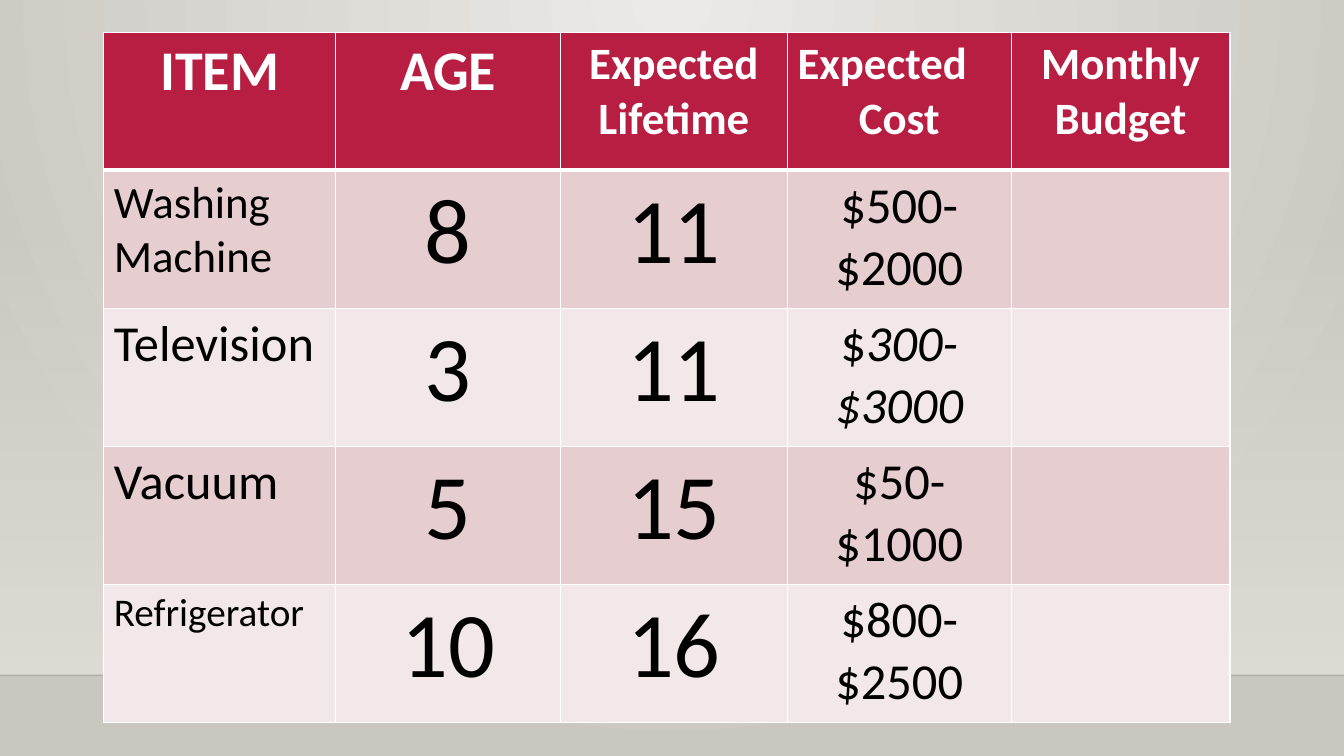
from lxml import etree
from pptx import Presentation
from pptx import util as u
from pptx.dml.color import RGBColor
from pptx.enum import shapes, text
from pptx.oxml import ns

WHITE = RGBColor(0xFF, 0xFF, 0xFF)
BLACK = RGBColor(0x00, 0x00, 0x00)
CRIMSON = RGBColor(0xB7, 0x1E, 0x42)
ROSE = RGBColor(0xE6, 0xCD, 0xCF)
BLUSH = RGBColor(0xF3, 0xE8, 0xE9)
LIGHT = RGBColor(0xEC, 0xEA, 0xE7)
FLOOR = RGBColor(0xCA, 0xC7, 0xC1)
WALL = RGBColor(0xDF, 0xDB, 0xD5)

WIDTH, HEIGHT = u.Inches(13.33), u.Inches(7.5)
FLOOR_TOP = u.Inches(6.7)
COLUMNS = [2.3, 2.23, 2.25, 2.22, 2.17]
ROW_HEIGHT = u.Inches(1.37)
LEFT, CENTER = text.PP_ALIGN.LEFT, text.PP_ALIGN.CENTER

HEADERS = [(["ITEM"], 40), (["AGE"], 40), (["Expected", "Lifetime"], 32),
           (["Expected", "Cost"], 32), (["Monthly Budget"], 32)]
APPLIANCES = [
    (["Washing", "Machine"], 32, "8", "11", ["$500-", "$2000"]),
    (["Television"], 36, "3", "11", ["$300-", "$3000"]),
    (["Vacuum"], 36, "5", "15", ["$50-", "$1000"]),
    (["Refrigerator"], 28, "10", "16", ["$800-", "$2500"]),
]


def add_child(parent, tag, **attributes):
    """Append a DrawingML element and return it."""
    return etree.SubElement(parent, ns.qn(tag), attributes)


def set_gradient(fill, first, last):
    """Give a fill a gradient between two colours."""
    fill.gradient()
    for stop, color in zip(fill.gradient_stops, (first, last)):
        stop.color.rgb = color


def set_background(slide):
    """Light the background from the middle of the top edge."""
    set_gradient(slide.background.fill, LIGHT, FLOOR)
    gradient = slide.element.xpath(".//p:bgPr/a:gradFill")[0]
    gradient.remove(gradient.find(ns.qn("a:lin")))
    circle = add_child(gradient, "a:path", path="circle")
    add_child(circle, "a:fillToRect", l="43000", t="0", r="43000", b="100000")


def add_wall(slide):
    """Add the wall that fades in towards the floor, and the floor's edge."""
    top = u.Inches(2.21)
    wall = slide.shapes.add_shape(
        shapes.MSO_SHAPE.RECTANGLE, 0, top, WIDTH, FLOOR_TOP - top)
    wall.shadow.inherit = False
    wall.line.fill.background()
    set_gradient(wall.fill, WALL, WALL)
    wall.fill.gradient_angle = 270
    add_child(wall.element.xpath(".//a:gs/a:srgbClr")[0], "a:alpha", val="0")

    edge = slide.shapes.add_connector(
        shapes.MSO_CONNECTOR.STRAIGHT, 0, FLOOR_TOP, WIDTH, FLOOR_TOP)
    edge.line.width = u.Pt(1)
    edge.line.color.rgb = BLACK
    add_child(edge.element.xpath(".//a:ln//a:srgbClr")[0], "a:alpha", val="20000")
    add_child(edge.element.spPr, "a:effectLst")


def set_borders(cell, top=1, bottom=1):
    """Draw white borders around a cell, widths in points."""
    properties = cell._tc.get_or_add_tcPr()
    widths = {"a:lnL": 1, "a:lnR": 1, "a:lnT": top, "a:lnB": bottom}
    for index, (tag, width) in enumerate(widths.items()):
        line = add_child(properties, tag, w=str(u.Pt(width)))
        add_child(add_child(line, "a:solidFill"), "a:srgbClr", val=str(WHITE))
        properties.insert(index, line)


def fill_cell(cell, lines, size, alignment=CENTER, color=BLACK, bold=False):
    """Write one paragraph per line into a cell."""
    cell.text = "\n".join(lines)
    for paragraph in cell.text_frame.paragraphs:
        paragraph.alignment = alignment
        font = paragraph.font
        font.name, font.size, font.bold = "Calibri", u.Pt(size), bold
        font.color.rgb = color


def italicize_cost(cell):
    """Slant a cost range, all but its first dollar sign."""
    low, high = cell.text_frame.paragraphs
    amount = low.text[1:]
    low.runs[0].text = "$"
    run = low.add_run()
    run.text = amount
    run.font.italic = high.font.italic = True


def add_budget_table(slide):
    """Add the table of appliances, their ages and their costs."""
    row_count = len(APPLIANCES) + 1
    table = slide.shapes.add_table(
        row_count, len(COLUMNS), u.Inches(1.03), u.Inches(0.32),
        u.Inches(sum(COLUMNS)), ROW_HEIGHT * row_count).table
    for column, width in zip(table.columns, COLUMNS):
        column.width = u.Inches(width)

    for index, row in enumerate(table.rows):
        row.height = ROW_HEIGHT
        for cell in row.cells:
            cell.fill.solid()
            cell.fill.fore_color.rgb = (
                CRIMSON if index == 0 else ROSE if index % 2 else BLUSH)
            set_borders(cell, top=3 if index == 1 else 1,
                        bottom=3 if index == 0 else 1)

    for column, (lines, size) in enumerate(HEADERS):
        fill_cell(table.cell(0, column), lines, size, color=WHITE, bold=True)
    table.cell(0, 3).text_frame.paragraphs[0].alignment = LEFT

    for row, (item, size, age, lifetime, cost) in enumerate(APPLIANCES, 1):
        fill_cell(table.cell(row, 0), item, size, LEFT)
        fill_cell(table.cell(row, 1), [age], 66)
        fill_cell(table.cell(row, 2), [lifetime], 66)
        fill_cell(table.cell(row, 3), cost, 36)
    italicize_cost(table.cell(2, 3))


def main():
    """Build the appliance budget slide."""
    presentation = Presentation()
    presentation.slide_width, presentation.slide_height = WIDTH, HEIGHT
    slide = presentation.slides.add_slide(presentation.slide_layouts[6])
    set_background(slide)
    add_wall(slide)
    add_budget_table(slide)
    presentation.save("out.pptx")


if __name__ == "__main__":
    main()
